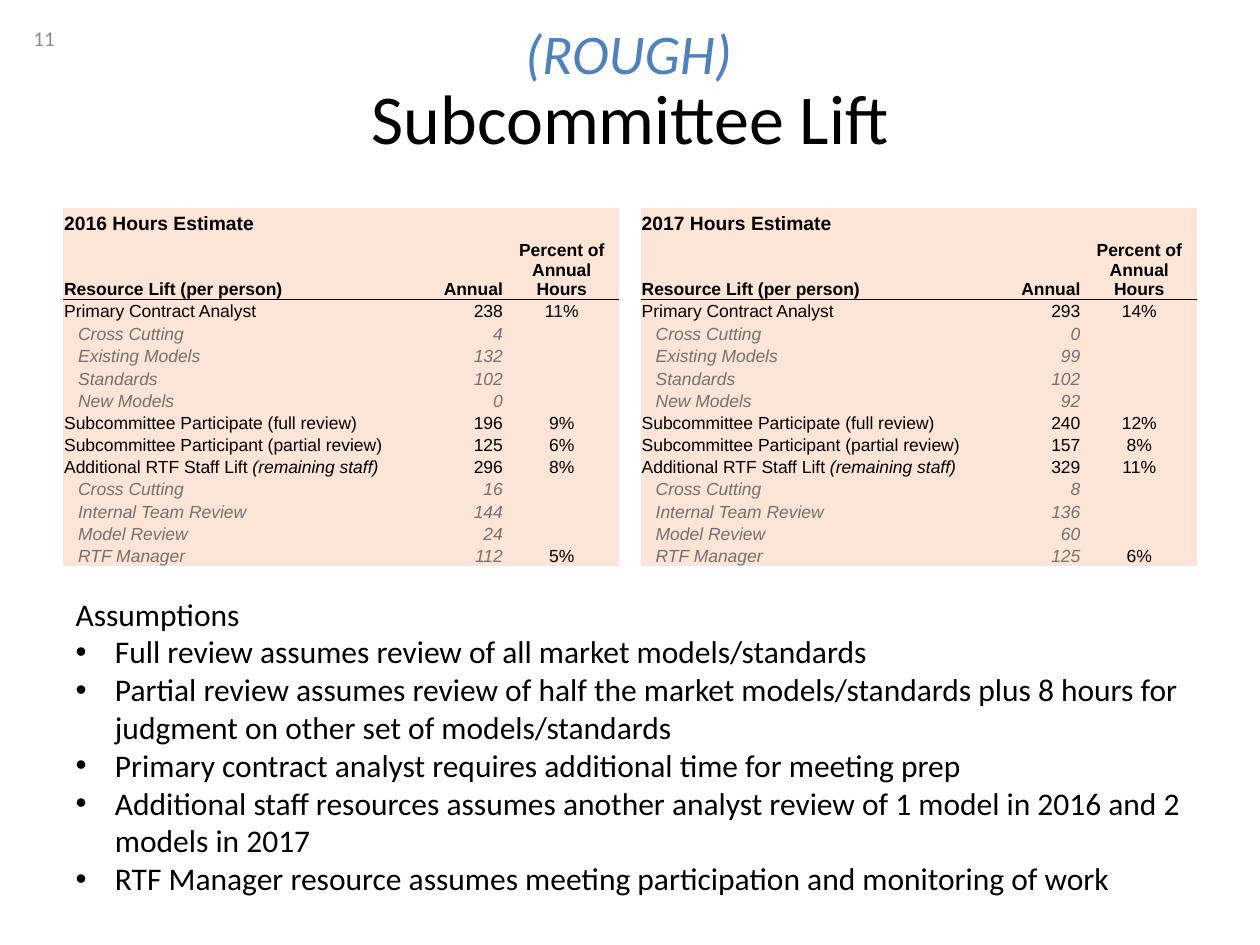
from lxml.etree import SubElement
from pptx import Presentation
from pptx.dml.color import RGBColor
from pptx.enum.text import MSO_ANCHOR, MSO_AUTO_SIZE, PP_ALIGN
from pptx.oxml.ns import qn
from pptx.util import Pt

BLACK = RGBColor(0, 0, 0)
DETAIL_GREY = RGBColor(0x75, 0x71, 0x71)
NUMBER_GREY = RGBColor(0x8C, 0x8C, 0x8C)
ROUGH_BLUE = RGBColor(0x4F, 0x81, 0xBD)
PEACH = RGBColor(0xFC, 0xE4, 0xD6)

TITLE = "Subcommittee Lift"
DRAFT_MARK = "(ROUGH)"
PAGE_NUMBER = "11"
HEADERS = ("Resource Lift (per person)", "Annual", "Percent of Annual Hours")
# label, italic remark, is a detail line
RESOURCES = [
    ("Primary Contract Analyst", "", False),
    ("Cross Cutting", "", True),
    ("Existing Models", "", True),
    ("Standards", "", True),
    ("New Models", "", True),
    ("Subcommittee Participate (full review)", "", False),
    ("Subcommittee Participant (partial review)", "", False),
    ("Additional RTF Staff Lift ", "(remaining staff)", False),
    ("Cross Cutting", "", True),
    ("Internal Team Review", "", True),
    ("Model Review", "", True),
    ("RTF Manager", "", True),
]
# heading, annual hours, percent of annual hours
ESTIMATES = [
    ("2016 Hours Estimate",
     (238, 4, 132, 102, 0, 196, 125, 296, 16, 144, 24, 112),
     ("11%", "", "", "", "", "9%", "6%", "8%", "", "", "", "5%")),
    ("2017 Hours Estimate",
     (293, 0, 99, 102, 92, 240, 157, 329, 8, 136, 60, 125),
     ("14%", "", "", "", "", "12%", "8%", "11%", "", "", "", "6%")),
]
ASSUMPTIONS_HEADING = "Assumptions"
ASSUMPTIONS = [
    "Full review assumes review of all market models/standards",
    "Partial review assumes review of half the market models/standards plus 8 hours "
    "for judgment on other set of models/standards",
    "Primary contract analyst requires additional time for meeting prep",
    "Additional staff resources assumes another analyst review of 1 model in 2016 "
    "and 2 models in 2017",
    "RTF Manager resource assumes meeting participation and monitoring of work",
]

MARGIN, CONTENT_WIDTH = 36, 648
TABLE_TOP, TABLE_GAP = 118.8, 12
COLUMN_WIDTHS = (190.8, 61.2, 66)
HEADING_HEIGHT, HEADER_HEIGHT, ROW_HEIGHT = 15, 37.5, 12.5
CELL_INSET, DETAIL_INSET = 0.7, 8.7
BULLET_INDENT = 22.5
ALIGNMENTS = (PP_ALIGN.LEFT, PP_ALIGN.RIGHT, PP_ALIGN.CENTER)
NO_STYLE_ID = "{2D5ABB26-0587-4C30-8999-92F81FD0307C}"


def add_run(paragraph, text, size, color=BLACK, font="Calibri", bold=False, italic=False):
    run = paragraph.add_run()
    run.text = text
    run.font.size, run.font.name = Pt(size), font
    run.font.bold, run.font.italic = bold, italic
    run.font.color.rgb = color


def place(shape, left, top, width, height):
    shape.left, shape.top = Pt(left), Pt(top)
    shape.width, shape.height = Pt(width), Pt(height)


def fill_cell(cell, column, runs, inset=CELL_INSET, underlined=False):
    """Write (text, size, format) runs; an empty cell keeps a small line height."""
    cell.margin_left, cell.margin_right = Pt(inset), Pt(CELL_INSET)
    cell.margin_top, cell.margin_bottom = Pt(CELL_INSET), 0
    cell.vertical_anchor = MSO_ANCHOR.BOTTOM
    paragraph = cell.text_frame.paragraphs[0]
    paragraph.alignment = ALIGNMENTS[column]
    for text, size, style in runs:
        if text:
            add_run(paragraph, text, size, font="Arial", **style)
    if not paragraph.runs:
        SubElement(paragraph._p, qn("a:endParaRPr"), sz="1000")
    if underlined:
        line = SubElement(cell._tc.get_or_add_tcPr(), qn("a:lnB"), w=str(Pt(0.5)))
        SubElement(SubElement(line, qn("a:solidFill")), qn("a:srgbClr"), val=str(BLACK))
    cell.fill.solid()
    cell.fill.fore_color.rgb = PEACH


def add_estimate(slide, left, heading, hours, percents):
    heights = [HEADING_HEIGHT, HEADER_HEIGHT] + [ROW_HEIGHT] * len(RESOURCES)
    frame = slide.shapes.add_table(
        len(heights), len(COLUMN_WIDTHS), Pt(left), Pt(TABLE_TOP),
        Pt(sum(COLUMN_WIDTHS)), Pt(sum(heights)))
    table = frame.table
    table.first_row = table.horz_banding = False
    table._tbl.tblPr.find(qn("a:tableStyleId")).text = NO_STYLE_ID
    for column, width in zip(table.columns, COLUMN_WIDTHS):
        column.width = Pt(width)
    for row, height in zip(table.rows, heights):
        row.height = Pt(height)

    bold = {"bold": True}
    for column, header in enumerate(HEADERS):
        fill_cell(table.cell(0, column), column, [("" if column else heading, 11, bold)])
        fill_cell(table.cell(1, column), column, [(header, 10, bold)], underlined=True)
    lines = zip(RESOURCES, hours, percents)
    for row, ((label, remark, detail), annual, percent) in enumerate(lines, start=2):
        style = {"color": DETAIL_GREY, "italic": True} if detail else {}
        fill_cell(table.cell(row, 0), 0,
                  [(label, 10, style), (remark, 10, {"italic": True})],
                  DETAIL_INSET if detail else CELL_INSET)
        fill_cell(table.cell(row, 1), 1, [(str(annual), 10, style)])
        fill_cell(table.cell(row, 2), 2, [(percent, 10, {})])


def add_assumptions(body):
    place(body, MARGIN, 336.2, CONTENT_WIDTH, 181.4)
    frame = body.text_frame
    frame.auto_size = MSO_AUTO_SIZE.NONE
    for index, text in enumerate([ASSUMPTIONS_HEADING] + ASSUMPTIONS):
        paragraph = frame.add_paragraph() if index else frame.paragraphs[0]
        paragraph.space_before = Pt(0)
        properties = paragraph._p.get_or_add_pPr()
        indent = Pt(BULLET_INDENT) if index else 0
        properties.set("marL", str(indent))
        properties.set("indent", str(-indent))
        if index:
            SubElement(properties, qn("a:buFont"), typeface="Arial")
            SubElement(properties, qn("a:buChar"), char="•")
        else:
            SubElement(properties, qn("a:buNone"))
        add_run(paragraph, text, 18)


def main():
    deck = Presentation()
    deck.slide_width, deck.slide_height = Pt(720), Pt(540)
    slide = deck.slides.add_slide(deck.slide_layouts[1])
    title, body = slide.placeholders

    place(title, MARGIN, 21.6, CONTENT_WIDTH, 90)
    title.text_frame.vertical_anchor = MSO_ANCHOR.MIDDLE
    title.text_frame.paragraphs[0].alignment = PP_ALIGN.CENTER
    add_run(title.text_frame.paragraphs[0], TITLE, 40)

    for index, estimate in enumerate(ESTIMATES):
        left = MARGIN + index * (sum(COLUMN_WIDTHS) + TABLE_GAP)
        add_estimate(slide, left, *estimate)

    number = slide.shapes.add_textbox(Pt(12), Pt(7.2), Pt(168), Pt(28.8)).text_frame
    number.word_wrap = True
    number.vertical_anchor = MSO_ANCHOR.MIDDLE
    add_run(number.paragraphs[0], PAGE_NUMBER, 12, NUMBER_GREY)

    draft = slide.shapes.add_textbox(Pt(293), Pt(7.2), Pt(134), Pt(46)).text_frame
    draft.word_wrap = False
    draft.auto_size = MSO_AUTO_SIZE.SHAPE_TO_FIT_TEXT
    add_run(draft.paragraphs[0], DRAFT_MARK, 32, ROUGH_BLUE, italic=True)

    add_assumptions(body)
    deck.save("out.pptx")


if __name__ == "__main__":
    main()
